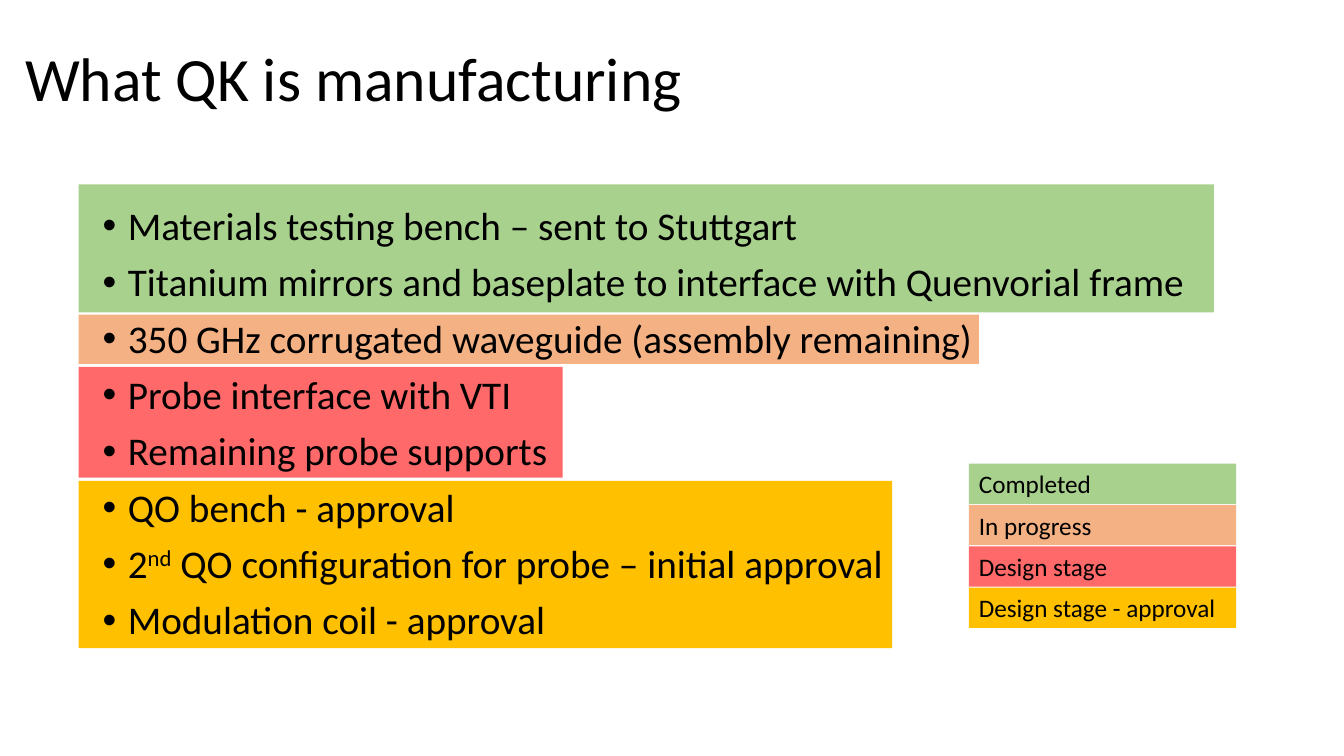
from lxml.etree import SubElement
from pptx import Presentation
from pptx.dml.color import RGBColor
from pptx.enum.shapes import MSO_SHAPE
from pptx.enum.text import MSO_ANCHOR, PP_ALIGN
from pptx.oxml.ns import qn
from pptx.util import Inches, Pt

FONT = "Calibri"
BLACK = RGBColor(0x00, 0x00, 0x00)
GREEN = RGBColor(0xA9, 0xD1, 0x8E)
ORANGE = RGBColor(0xF4, 0xB1, 0x83)
RED = RGBColor(0xFF, 0x69, 0x69)
YELLOW = RGBColor(0xFF, 0xC0, 0x00)

# Top, width and height of each status band behind the list
BANDS = [
    (RED, 3.64, 4.8, 1.1),
    (YELLOW, 4.77, 8.07, 1.66),
    (ORANGE, 3.12, 8.93, 0.49),
    (GREEN, 1.83, 11.26, 1.27),
]
# Each item is a list of (text, is superscript) pieces
ITEMS = [
    [("Materials testing bench – sent to Stuttgart", False)],
    [("Titanium mirrors and baseplate to interface with Quenvorial frame", False)],
    [("350 GHz corrugated waveguide (assembly remaining)", False)],
    [("Probe interface with VTI", False)],
    [("Remaining probe supports", False)],
    [("QO bench - approval", False)],
    [("2", False), ("nd", True),
     (" QO configuration for probe – initial approval", False)],
    [("Modulation coil - approval", False)],
]
LEGEND = [
    ("Completed", GREEN),
    ("In progress", ORANGE),
    ("Design stage", RED),
    ("Design stage - approval", YELLOW),
]


def set_font(font, size):
    font.name = FONT
    font.size = Pt(size)
    font.color.rgb = BLACK


def add_block(page, left, top, width, height, color):
    block = page.shapes.add_shape(
        MSO_SHAPE.RECTANGLE, Inches(left), Inches(top), Inches(width), Inches(height))
    block.shadow.inherit = False
    block.fill.solid()
    block.fill.fore_color.rgb = color
    block.line.fill.background()
    return block


def add_text_frame(page, left, top, width, height):
    box = page.shapes.add_textbox(
        Inches(left), Inches(top), Inches(width), Inches(height))
    box.text_frame.word_wrap = True
    return box.text_frame


def add_bullet(para):
    properties = para._p.get_or_add_pPr()
    properties.set("marL", str(Inches(0.25)))
    properties.set("indent", str(Inches(-0.25)))
    SubElement(properties, qn("a:buFont"), typeface="Arial")
    SubElement(properties, qn("a:buChar"), char="•")


def add_title(page, left, top, width, height):
    frame = add_text_frame(page, left, top, width, height)
    frame.vertical_anchor = MSO_ANCHOR.MIDDLE
    frame.text = "What QK is manufacturing"
    para = frame.paragraphs[0]
    para.line_spacing = 0.9
    set_font(para.runs[0].font, 44)


def add_bands(page, left):
    for color, top, width, height in BANDS:
        add_block(page, left, top, width, height, color)


def add_items(page, left, top, width, height):
    frame = add_text_frame(page, left, top, width, height)
    for index, pieces in enumerate(ITEMS):
        para = frame.add_paragraph() if index else frame.paragraphs[0]
        add_bullet(para)
        para.line_spacing = 0.9
        if index:
            para.space_before = Pt(10)
        for text, is_superscript in pieces:
            span = para.add_run()
            span.text = text
            set_font(span.font, 28)
            if is_superscript:
                span._r.get_or_add_rPr().set("baseline", "30000")


def add_legend(page, left, top, width, row_height, pitch):
    for row, (label, color) in enumerate(LEGEND):
        block = add_block(page, left, top + row * pitch, width, row_height, color)
        frame = block.text_frame
        frame.word_wrap = True
        frame.vertical_anchor = MSO_ANCHOR.TOP
        frame.text = label
        para = frame.paragraphs[0]
        para.alignment = PP_ALIGN.LEFT
        set_font(para.runs[0].font, 18)


def build_status_slide(deck):
    page = deck.slides.add_slide(deck.slide_layouts[6])
    add_bands(page, 0.78)
    add_items(page, 0.92, 2, 11.5, 4.76)
    add_title(page, 0.15, 0.08, 11.5, 1.45)
    add_legend(page, 9.61, 4.6, 2.65, 0.4, 0.41)


def main():
    deck = Presentation()
    deck.slide_width = Inches(13.33)
    deck.slide_height = Inches(7.5)
    build_status_slide(deck)
    deck.save("out.pptx")


if __name__ == "__main__":
    main()
